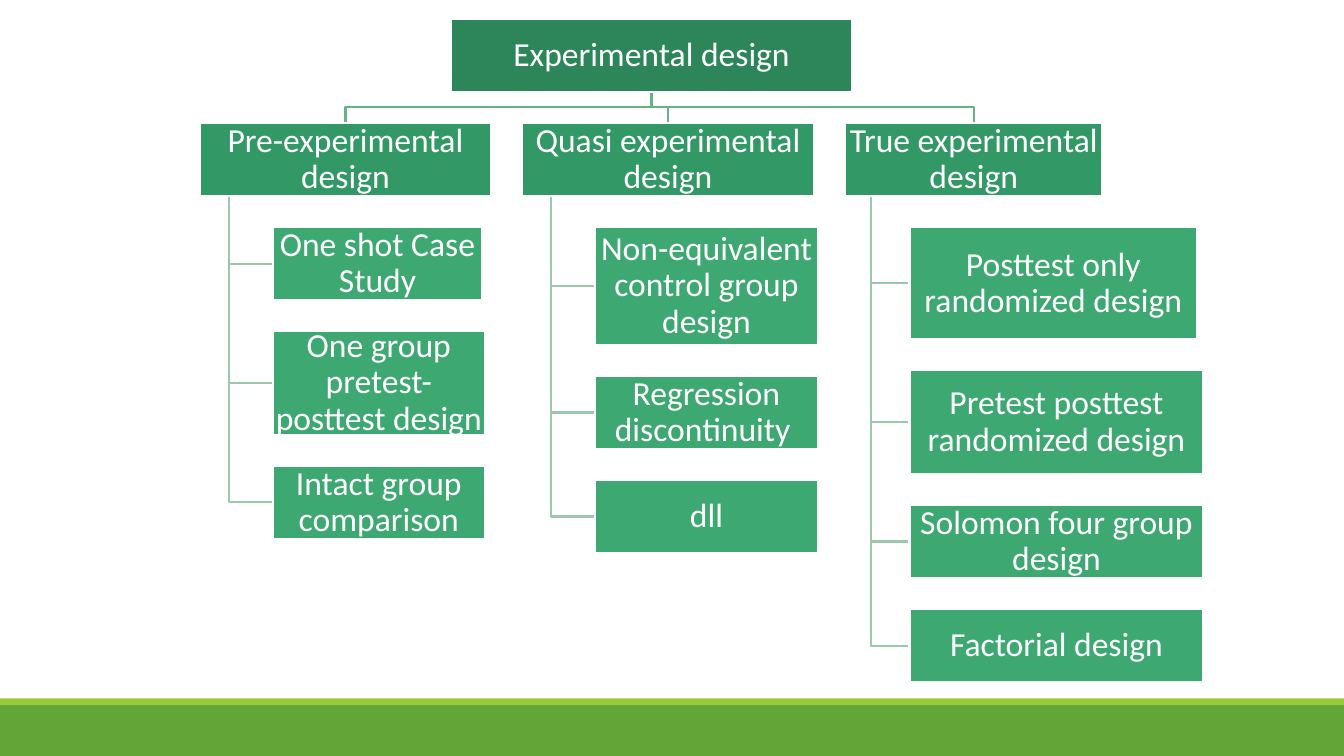
from pptx import Presentation
from pptx.dml.color import RGBColor
from pptx.enum.shapes import MSO_SHAPE
from pptx.enum.text import MSO_ANCHOR, PP_ALIGN
from pptx.util import Cm, Pt

COLORS = {
    "root": "2C8659", "branch": "329865", "leaf": "3EA872", "white": "FFFFFF",
    "trunk": "68B287", "twig": "9BC7AC", "footer": "63A537", "stripe": "99CB38",
}
ROW, GAP = 1.39, 0.58
ROOT = ("Experimental design", 8.53, 0.35, 7.57)
BRANCHES = [
    ("Pre-experimental design", 5.5, [
        ("One shot Case Study", 3.96, ROW),
        ("One group pretest-posttest design", 4.01, 1.96),
        ("Intact group comparison", 4.01, ROW)]),
    ("Quasi experimental design", 5.53, [
        ("Non-equivalent control group design", 4.22, 2.23),
        ("Regression discontinuity ", 4.22, ROW),
        ("dll", 4.22, ROW)]),
    ("True experimental design", 4.87, [
        ("Posttest only randomized design", 5.44, 2.13),
        ("Pretest posttest randomized design", 5.56, 1.96),
        ("Solomon four group design", 5.56, ROW),
        ("Factorial design", 5.56, ROW)]),
]


class Chart:
    """Draws the parts of a hierarchy chart on one slide."""

    def __init__(self, s, font="Calibri", size=18, line=1.25):
        self.s, self.font, self.size, self.line = s, font, size, line

    def color(self, name):
        return RGBColor.from_string(COLORS[name])

    def band(self, fill, x, y, w, h):
        sp = self.s.shapes.add_shape(MSO_SHAPE.RECTANGLE, Cm(x), Cm(y), Cm(w), Cm(h))
        sp.shadow.inherit = False
        sp.fill.solid()
        sp.fill.fore_color.rgb = self.color(fill)
        sp.line.fill.background()
        return sp

    def box(self, fill, text, x, y, w, h=ROW):
        sp = self.band(fill, x, y, w, h)
        sp.line.color.rgb = self.color("white")
        sp.line.width = Pt(self.line)
        tf = sp.text_frame
        tf.word_wrap = True
        tf.vertical_anchor = MSO_ANCHOR.MIDDLE
        tf.margin_left = tf.margin_right = tf.margin_top = tf.margin_bottom = Cm(0.03)
        p = tf.paragraphs[0]
        p.text = text
        p.alignment = PP_ALIGN.CENTER
        p.line_spacing = 0.9
        p.font.name, p.font.size = self.font, Pt(self.size)
        p.font.color.rgb = self.color("white")

    def elbow(self, color, *points):
        start, *rest = [(Cm(x), Cm(y)) for x, y in points]
        builder = self.s.shapes.build_freeform(*start)
        builder.add_line_segments(rest, close=False)
        sp = builder.convert_to_shape()
        sp.shadow.inherit = False
        sp.fill.background()
        sp.line.color.rgb = self.color(color)
        sp.line.width = Pt(self.line)


def main():
    prs = Presentation()
    prs.slide_width, prs.slide_height = Cm(25.4), Cm(14.29)
    chart = Chart(prs.slides.add_slide(prs.slide_layouts[6]))
    chart.band("footer", 0, 13.33, 25.4, 0.96)
    chart.band("stripe", 0, 13.2, 25.4, 0.13)

    text, root_x, root_y, root_w = ROOT
    center, root_end = root_x + root_w / 2, root_y + ROW
    branch_y = root_end + GAP
    branch_end = branch_y + ROW
    bus_y = root_end + GAP / 2
    x = 3.78
    for name, width, leaves in BRANCHES:
        middle, spine, leaf_x = x + width / 2, x + width * 0.1, x + width * 0.25
        chart.elbow("trunk", (center, root_end), (center, bus_y),
                    (middle, bus_y), (middle, branch_y))
        y = branch_end + GAP
        for leaf, w, h in leaves:
            chart.elbow("twig", (spine, branch_end), (spine, y + h / 2),
                        (leaf_x, y + h / 2))
            chart.box("leaf", leaf, leaf_x, y, w, h)
            y += h + GAP
        chart.box("branch", name, x, branch_y, width)
        x += width + GAP
    chart.box("root", text, root_x, root_y, root_w)
    prs.save("out.pptx")


if __name__ == "__main__":
    main()
